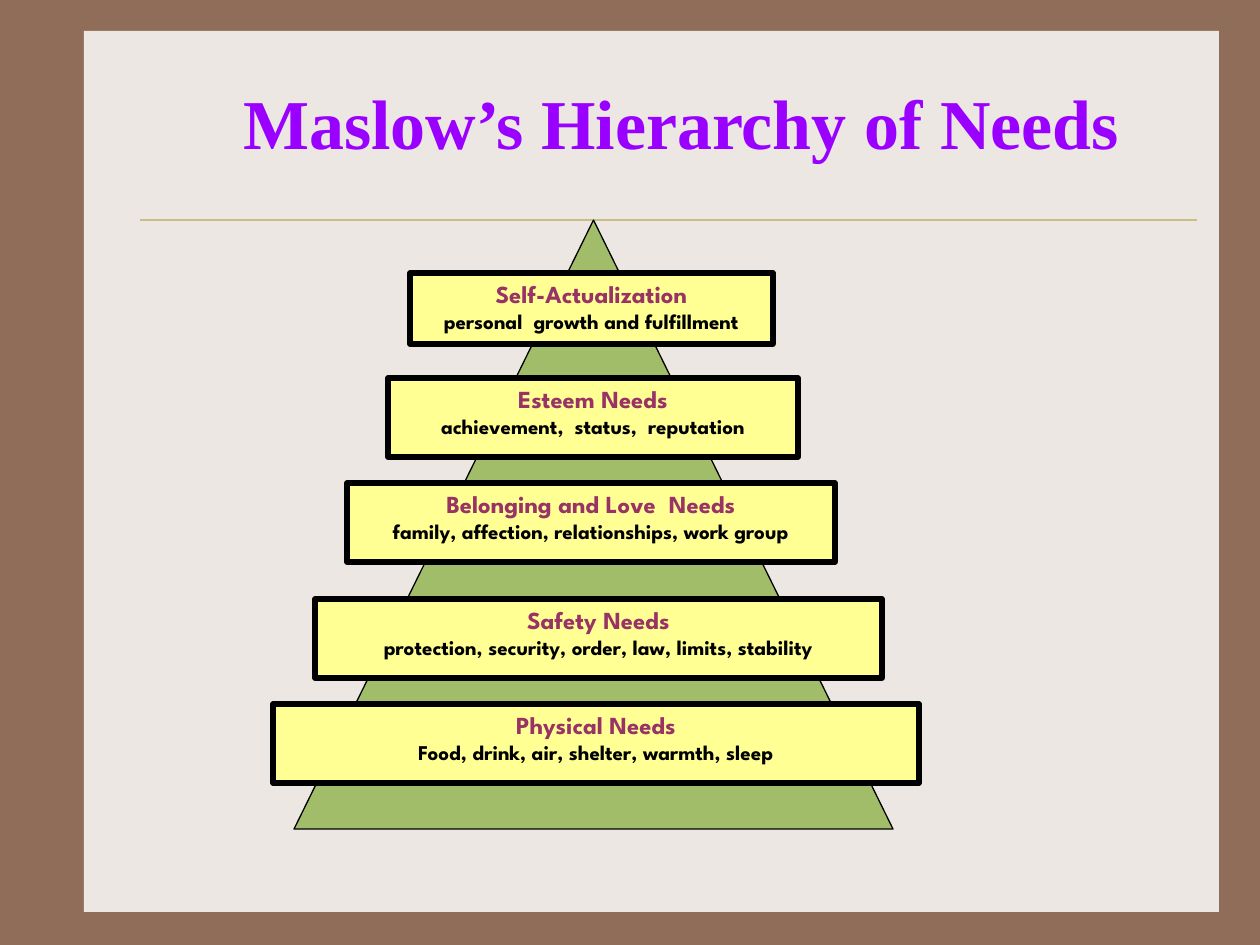
from dataclasses import dataclass

from lxml.etree import SubElement
from pptx import Presentation
from pptx.dml.color import RGBColor
from pptx.enum.shapes import MSO_CONNECTOR, MSO_SHAPE
from pptx.enum.text import MSO_ANCHOR, MSO_AUTO_SIZE, PP_ALIGN
from pptx.oxml.ns import qn
from pptx.util import Pt

SCALE = 914400 / 126


@dataclass(frozen=True)
class Theme:
    frame: str = "906D58"
    panel: str = "EDE7E3"
    rule: str = "CBBD83"
    green: str = "A1BD69"
    yellow: str = "FFFF93"
    black: str = "000000"
    plum: str = "993366"
    violet: str = "9900FF"
    serif: str = "Times New Roman"
    sans: str = "League Spartan"
    title: int = 40
    head: int = 14
    note: int = 12
    thin: float = 0.75
    thick: int = 3


THEME = Theme()

# left, top, width, height, need, examples
LEVELS = [
    (410, 273, 363, 71, "Self-Actualization",
     "personal  growth and fulfillment"),
    (388, 378, 410, 79, "Esteem Needs",
     "achievement,  status,  reputation"),
    (347, 483, 488, 79, "Belonging and Love  Needs",
     "family, affection, relationships, work group"),
    (315, 599, 567, 79, "Safety Needs",
     "protection, security, order, law, limits, stability"),
    (273, 704, 646, 79, "Physical Needs",
     "Food, drink, air, shelter, warmth, sleep"),
]


def px(n):
    return round(n * SCALE)


def rgb(code):
    return RGBColor.from_string(code)


def apply(item, **values):
    for name, value in values.items():
        setattr(item, name, value)


def style(font, face, size, color):
    apply(font, name=face, size=Pt(size), bold=True)
    font.color.rgb = rgb(color)


def add_shape(slide, kind, box, fill, width=None):
    """Add a flat shape, outlined in black if a line width is given."""
    shape = slide.shapes.add_shape(kind, *map(px, box))
    shape.shadow.inherit = False
    shape.fill.solid()
    shape.fill.fore_color.rgb = rgb(fill)
    if width is None:
        shape.line.fill.background()
    else:
        shape.line.color.rgb = rgb(THEME.black)
        shape.line.width = Pt(width)
    return shape


def add_rule(slide, left, right, y):
    line = slide.shapes.add_connector(
        MSO_CONNECTOR.STRAIGHT, px(left), px(y), px(right), px(y))
    line.line.color.rgb = rgb(THEME.rule)
    line.line.width = Pt(THEME.thin)
    SubElement(line._element.spPr, qn("a:effectLst"))


def set_title(slide, text):
    title = slide.shapes.title
    apply(title, left=px(136), top=px(73), width=px(1008), height=px(97))
    frame = title.text_frame
    frame.text = text
    apply(frame, margin_left=px(107), vertical_anchor=MSO_ANCHOR.TOP,
          word_wrap=True, auto_size=MSO_AUTO_SIZE.NONE)
    line = frame.paragraphs[0]
    line.alignment = PP_ALIGN.LEFT
    style(line.runs[0].font, THEME.serif, THEME.title, THEME.violet)


def add_level(slide, left, top, width, height, need, notes):
    shape = add_shape(slide, MSO_SHAPE.RECTANGLE, (left, top, width, height),
                      THEME.yellow, THEME.thick)
    frame = shape.text_frame
    apply(frame, vertical_anchor=MSO_ANCHOR.TOP, word_wrap=True)
    frame.text = f"{need}\n{notes}"
    looks = [(THEME.head, THEME.plum), (THEME.note, THEME.black)]
    for line, look in zip(frame.paragraphs, looks):
        line.alignment = PP_ALIGN.CENTER
        style(line.runs[0].font, THEME.sans, *look)


def main():
    deck = Presentation()
    apply(deck, slide_width=px(1260), slide_height=px(945))
    slide = deck.slides.add_slide(deck.slide_layouts[5])
    back = slide.background.fill
    back.solid()
    back.fore_color.rgb = rgb(THEME.frame)

    panel = add_shape(slide, MSO_SHAPE.RECTANGLE, (84, 31, 1135, 881),
                      THEME.panel)
    # The title placeholder comes first, so the panel goes behind it.
    slide.shapes.title._element.addprevious(panel._element)
    set_title(slide, "Maslow’s Hierarchy of Needs")
    add_rule(slide, 140, 1197, 220)
    add_shape(slide, MSO_SHAPE.ISOSCELES_TRIANGLE, (294, 220, 599, 609),
              THEME.green, THEME.thin)
    for level in LEVELS:
        add_level(slide, *level)
    deck.save("out.pptx")


if __name__ == "__main__":
    main()
